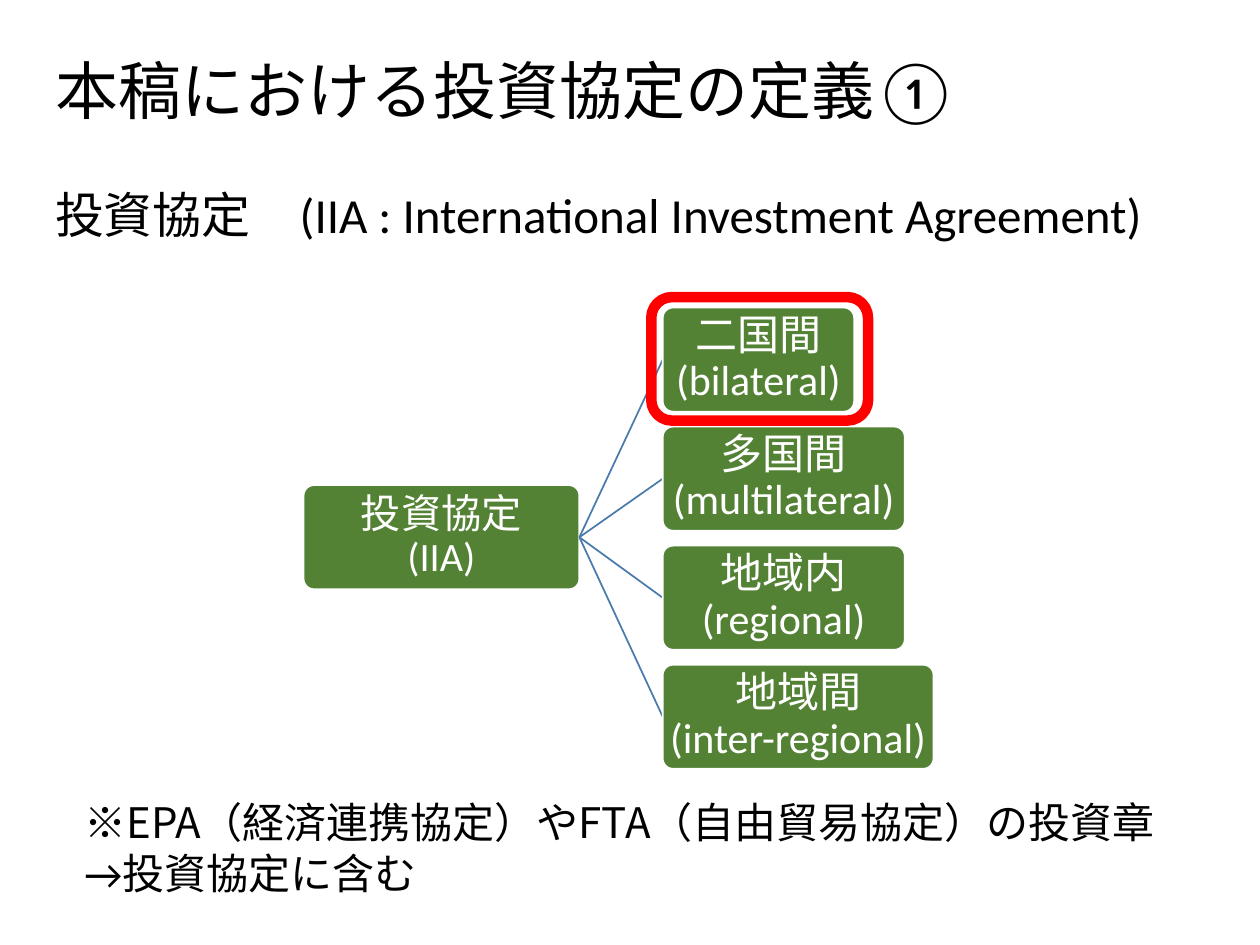
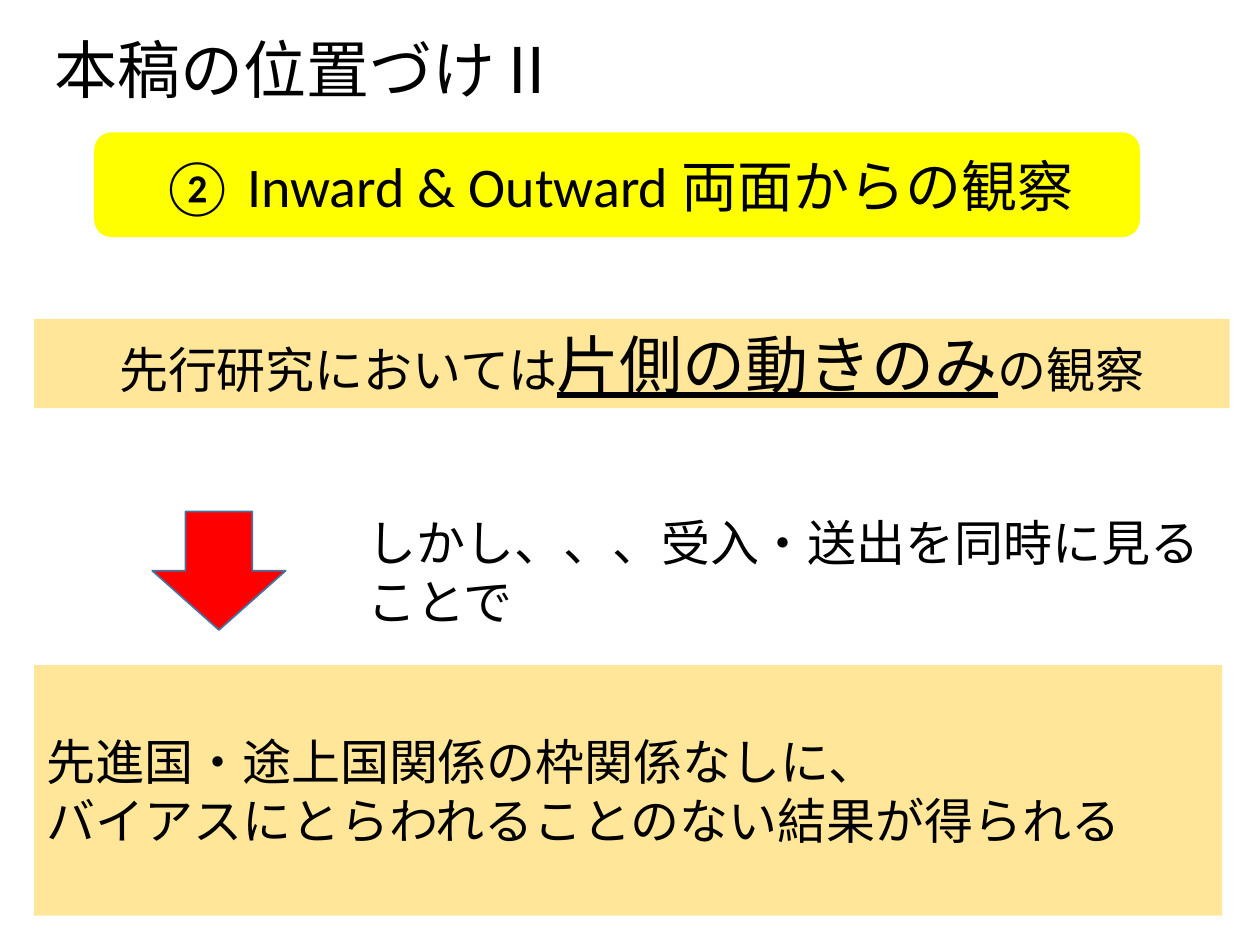
from lxml import etree
from pptx import Presentation
from pptx.dml.color import RGBColor
from pptx.enum.shapes import MSO_CONNECTOR, MSO_SHAPE
from pptx.enum.text import MSO_ANCHOR, PP_ALIGN
from pptx.oxml.ns import qn
from pptx.util import Cm, Pt

ROUND, RECT, ARROW = MSO_SHAPE.ROUNDED_RECTANGLE, MSO_SHAPE.RECTANGLE, MSO_SHAPE.DOWN_ARROW
STRAIGHT = MSO_CONNECTOR.STRAIGHT
TOP, MIDDLE = MSO_ANCHOR.TOP, MSO_ANCHOR.MIDDLE
LEFT, CENTER = PP_ALIGN.LEFT, PP_ALIGN.CENTER
LATIN, GOTHIC = "Calibri", "Noto Sans CJK JP"
HUES = {
    "ink": "000000", "white": "FFFFFF", "green": "548235", "link": "497CAB",
    "red": "FF0000", "yellow": "FFFF00", "sand": "FFE699", "edge": "43739E",
}


def add_shape(slide, kind, area, fill=None, line=None, width=1):
    shape = slide.shapes.add_shape(kind, *[Cm(v) for v in area])
    shape.shadow.inherit = False
    if fill:
        shape.fill.solid()
        shape.fill.fore_color.rgb = RGBColor.from_string(HUES[fill])
    else:
        shape.fill.background()
    if line:
        shape.line.color.rgb = RGBColor.from_string(HUES[line])
        shape.line.width = Pt(width)
    else:
        shape.line.fill.background()
    return shape


def write(shape, lines, size, inset=0.25, side=LEFT, anchor=TOP, face=LATIN, hue="ink", gap=None):
    frame = shape.text_frame
    frame.word_wrap = True
    frame.vertical_anchor = anchor
    frame.margin_left = frame.margin_right = Cm(inset)
    frame.margin_top = frame.margin_bottom = Cm(inset)
    for i, line in enumerate(lines):
        para = frame.paragraphs[0] if i == 0 else frame.add_paragraph()
        para.text = line
        para.alignment = side
        if gap:
            para.line_spacing = gap
        font = para.font
        font.size = Pt(size)
        font.name = face
        font.color.rgb = RGBColor.from_string(HUES[hue])
        props = para._p.pPr.find(qn("a:defRPr"))
        etree.SubElement(props, qn("a:ea")).set("typeface", LATIN)
    return frame.paragraphs[0]


deck = Presentation()
deck.slide_width, deck.slide_height = Cm(25.4), Cm(19.05)
slides = []
for title, left, top, face in [
    ("本稿における投資協定の定義①", 0.86, 0.97, GOTHIC),
    ("本稿の位置づけⅡ", 0.84, 0.53, LATIN),
]:
    slide = deck.slides.add_slide(deck.slide_layouts[6])
    box = slide.shapes.add_textbox(Cm(left), Cm(top), Cm(23.67), Cm(2.11))
    write(box, [title], 36, face=face, gap=0.9)
    slides.append(slide)
terms, place = slides

box = terms.shapes.add_textbox(Cm(0.86), Cm(3.61), Cm(23.67), Cm(11.96))
lead = write(box, ["投資協定　"], 28, gap=0.9)
lead.runs[0].font.name = GOTHIC
lead.add_run().text = "(IIA : International Investment Agreement)"

box = terms.shapes.add_textbox(Cm(1.45), Cm(15.8), Cm(23.95), Cm(3.25))
note = ["※EPA（経済連携協定）やFTA（自由貿易協定）の投資章", "→投資協定に含む"]
write(box, note, 24, face=GOTHIC, gap=Pt(29))

tall = 2.1
root = (6.12, 9.78, 5.56, tall)
nodes = [(root, "投資協定\n(IIA)", 23)]
kinds = [
    ("二国間\n(bilateral)", 3.86),
    ("多国間\n(multilateral)", 4.88),
    ("地域内\n(regional)", 4.88),
    ("地域間\n(inter-regional)", 5.46),
]
for i, (label, wide) in enumerate(kinds):
    nodes.append(((13.36, 6.2 + 2.4 * i, wide, tall), label, 24))

for area, label, size in nodes:
    if area != root:
        ends = (root[0] + root[2], root[1] + tall / 2, area[0], area[1] + tall / 2)
        link = terms.shapes.add_connector(STRAIGHT, *[Cm(v) for v in ends])
        link.line.color.rgb = RGBColor.from_string(HUES["link"])
        link.line.width = Pt(1)
        etree.SubElement(link._element.spPr, qn("a:effectLst"))
    node = add_shape(terms, ROUND, area, "green", "white")
    node.adjustments[0] = 0.1
    write(node, [label], size, 0.05, CENTER, MIDDLE, hue="white", gap=0.9)

add_shape(terms, ROUND, (13.13, 5.99, 4.37, 2.49), line="red", width=6)

point = add_shape(place, ROUND, (1.9, 2.67, 21.08, 2.11), "yellow")
write(point, ["② Inward & Outward 両面からの観察"], 32, 0.13, CENTER, MIDDLE)

result = add_shape(place, RECT, (0.69, 13.41, 23.95, 5.05), "sand")
gains = ["先進国・途上国関係の枠関係なしに、", "バイアスにとらわれることのない結果が得られる"]
write(result, gains, 28, 0.25, anchor=MIDDLE)

past = add_shape(place, RECT, (0.69, 6.43, 24.1, 1.8), "sand")
claim = write(past, ["先行研究においては"], 28, 0.13, CENTER)
stress = claim.add_run()
stress.text = "片側の動きのみ"
stress.font.size = Pt(36)
stress.font.underline = True
claim.add_run().text = "の観察"

add_shape(place, ARROW, (3.07, 10.31, 2.69, 2.39), "red", "edge")

box = place.shapes.add_textbox(Cm(7.16), Cm(10.08), Cm(17.48), Cm(1.45))
write(box, ["しかし、、、受入・送出を同時に見ることで"], 28, 0.25).space_before = Pt(0)

deck.save("out.pptx")
